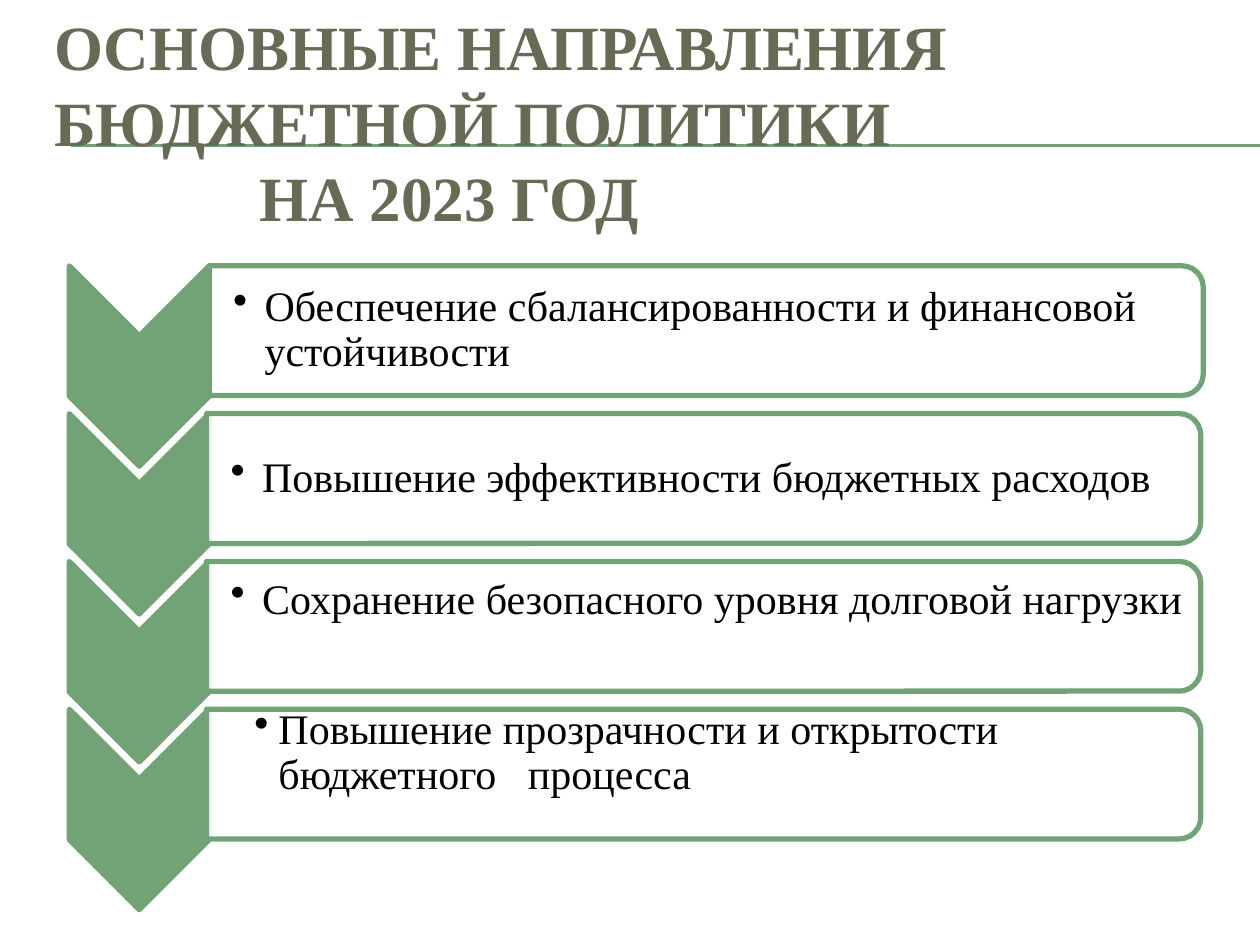
import pptx
import pptx.util
import pptx.dml.color
import pptx.enum.shapes
import pptx.enum.text
import pptx.oxml
import pptx.oxml.ns
from pptx.util import Inches

TITLE = [("ОСНОВНЫЕ НАПРАВЛЕНИЯ БЮДЖЕТНОЙ ПОЛИТИКИ", 0), ("НА 2023 ГОД", 1.63)]
# text, panel left, text left, hanging indent, (left, top, right, bottom) insets
DIRECTIONS = [
    ("Обеспечение сбалансированности и финансовой устойчивости",
     1.66, 1.66, 0.25, (0.19, 0.02, 0.02, 0.02)),
    ("Повышение эффективности бюджетных расходов",
     1.64, 1.64, 0.25, (0.19, 0.02, 0.02, 0.02)),
    ("Сохранение безопасного уровня долговой нагрузки",
     1.64, 1.64, 0.25, (0.19, 0.02, 0.02, 0.43)),
    ("Повышение прозрачности и открытости бюджетного   процесса",
     1.64, 1.87, 0.19, (0.15, 0.01, 0.01, 0.34)),
]
GREEN, OLIVE, WHITE, BLACK = "72A376", "676A55", "FFFFFF", "000000"
FONT = "Times New Roman"
FIRST_TOP, ROW_STEP = 2.11, 1.173
CHEVRON_LEFT, CHEVRON_WIDTH, CHEVRON_HEIGHT = 0.55, 1.11, 1.59
PANEL_WIDTH, PANEL_HEIGHT = 7.89, 1.03
TEXT_INSET, TEXT_WIDTH, TEXT_HEIGHT = 0.05, 7.84, 0.93


def color(value):
    return pptx.dml.color.RGBColor.from_string(value)


def add_xml(parent, tag, **attributes):
    element = pptx.oxml.parse_xml(f"<{tag} {pptx.oxml.ns.nsdecls('a')}/>")
    for name, value in attributes.items():
        element.set(name, str(value))
    parent.append(element)


def format_font(font, **values):
    for name, value in values.items():
        setattr(font, name, value)


def format_frame(frame, insets):
    values = {"word_wrap": True,
              "auto_size": pptx.enum.text.MSO_AUTO_SIZE.NONE,
              "vertical_anchor": pptx.enum.text.MSO_ANCHOR.MIDDLE}
    sides = ("left", "top", "right", "bottom")
    values.update({f"margin_{side}": Inches(inset) for side, inset in zip(sides, insets)})
    for name, value in values.items():
        setattr(frame, name, value)


def add_rule(slide, y):
    """Draw a thin line behind everything else."""
    rule = slide.shapes.add_connector(
        pptx.enum.shapes.MSO_CONNECTOR.STRAIGHT, Inches(0.56), Inches(y), Inches(10), Inches(y))
    rule.line.color.rgb = color(GREEN)
    rule.line.width = pptx.util.Pt(0.75)
    add_xml(rule._element.spPr, "a:effectLst")
    slide.shapes._spTree.insert(2, rule._element)


def add_title(slide):
    title = slide.shapes.title
    title.left, title.top, title.width, title.height = map(Inches, (0.33, 0.5, 9.5, 0.92))
    frame = title.text_frame
    format_frame(frame, (0.1, 0.05, 0.1, 0.05))
    frame.text = "\n".join(text for text, _ in TITLE)
    for paragraph, (_, indent) in zip(frame.paragraphs, TITLE):
        paragraph.alignment = pptx.enum.text.PP_ALIGN.LEFT
        paragraph._p.get_or_add_pPr().set("marL", str(Inches(indent)))
        format_font(paragraph.runs[0].font, name=FONT, size=pptx.util.Pt(36), bold=True)
        paragraph.runs[0].font.color.rgb = color(OLIVE)


def add_turned_shape(slide, kind, left, top, width, height, fill):
    """Add a shape turned by 90 degrees that covers the given visible area."""
    shape = slide.shapes.add_shape(
        kind, Inches(left + (width - height) / 2), Inches(top + (height - width) / 2),
        Inches(height), Inches(width))
    shape.rotation = 90
    shape.shadow.inherit = False
    shape.fill.solid()
    shape.fill.fore_color.rgb = color(fill)
    shape.line.color.rgb = color(GREEN)
    shape.line.width = pptx.util.Pt(3)
    return shape


def add_direction(slide, top, text, panel_left, text_left, indent, insets):
    kinds = pptx.enum.shapes.MSO_SHAPE
    add_turned_shape(slide, kinds.CHEVRON, CHEVRON_LEFT, top,
                     CHEVRON_WIDTH, CHEVRON_HEIGHT, GREEN)
    panel = add_turned_shape(slide, kinds.ROUND_2_SAME_RECTANGLE, panel_left, top,
                             PANEL_WIDTH, PANEL_HEIGHT, WHITE)
    fill_color = panel._element.spPr.find(pptx.oxml.ns.qn("a:solidFill"))[0]
    add_xml(fill_color, "a:alpha", val=90000)

    box = slide.shapes.add_textbox(Inches(text_left), Inches(top + TEXT_INSET),
                                   Inches(TEXT_WIDTH), Inches(TEXT_HEIGHT))
    format_frame(box.text_frame, insets)
    paragraph = box.text_frame.paragraphs[0]
    paragraph.text = text
    paragraph.line_spacing = 0.9
    format_font(paragraph.runs[0].font, name=FONT, size=pptx.util.Pt(24))
    paragraph.runs[0].font.color.rgb = color(BLACK)
    properties = paragraph._p.get_or_add_pPr()
    properties.set("marL", str(Inches(indent)))
    properties.set("indent", str(-Inches(indent)))
    add_xml(properties, "a:buChar", char="•")


def main():
    presentation = pptx.Presentation()
    presentation.slide_width, presentation.slide_height = Inches(10), Inches(7.5)
    slide = presentation.slides.add_slide(presentation.slide_layouts[5])
    add_title(slide)
    for y in (1.16, 1.15):
        add_rule(slide, y)
    for row, direction in enumerate(DIRECTIONS):
        add_direction(slide, FIRST_TOP + row * ROW_STEP, *direction)
    presentation.save("out.pptx")


if __name__ == "__main__":
    main()
